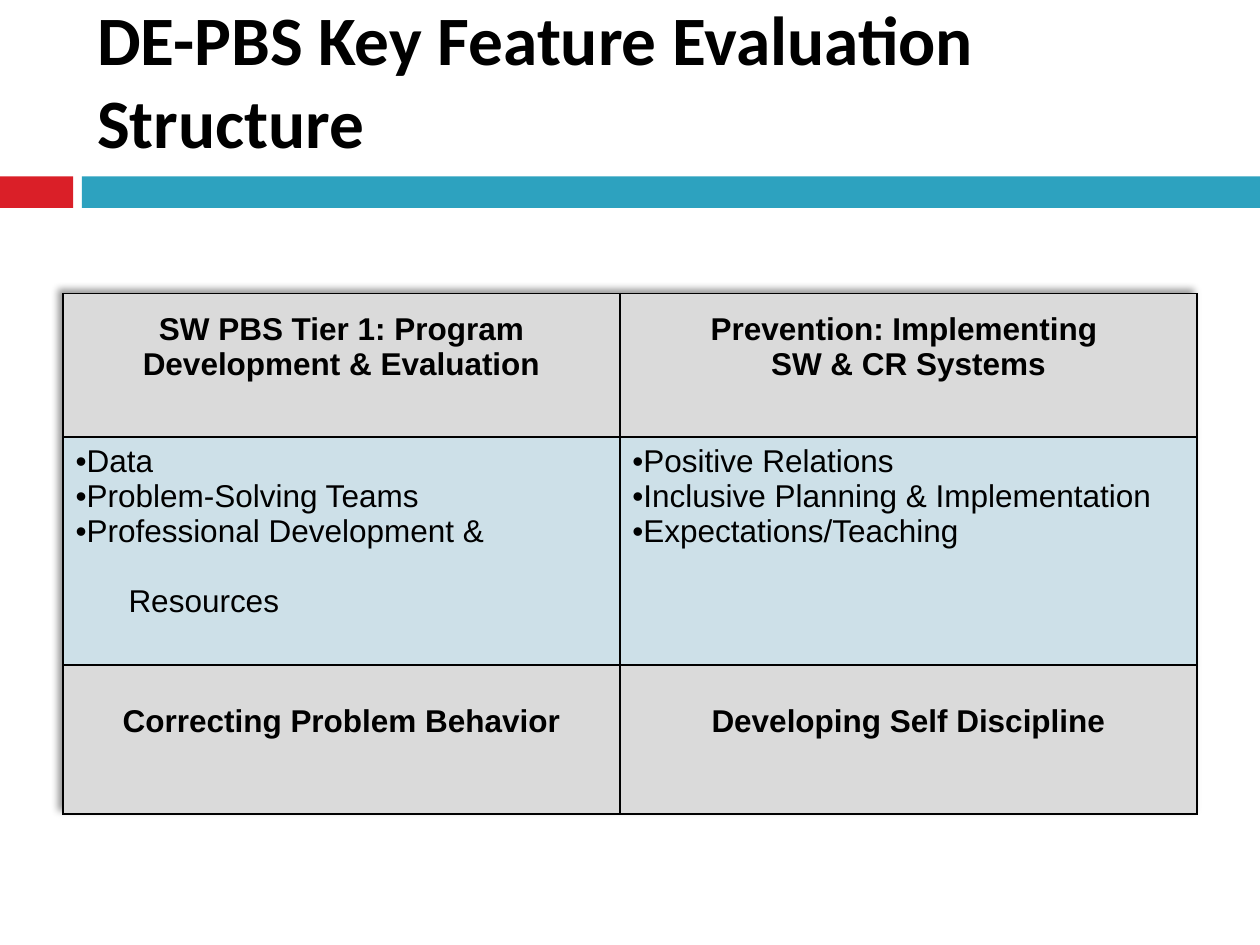
import pptx
import pptx.util
import pptx.dml.color
import pptx.enum.shapes
import pptx.enum.text
import pptx.oxml
from dataclasses import dataclass
from pptx.oxml.ns import qn

Inch, Pt = pptx.util.Inches, pptx.util.Pt
Align, Anchor = pptx.enum.text.PP_ALIGN, pptx.enum.text.MSO_ANCHOR
WIDE, HIGH = 10, 7.5
BLACK, GREY, PALE = "000000", "DADADA", "CDE0E8"
NS = 'xmlns:a="http://schemas.openxmlformats.org/drawingml/2006/main"'


@dataclass
class Band:
    left: float
    width: float
    fill: str


@dataclass
class Row:
    height: float
    cells: list[list[str]]
    head: bool = True


BANDS = [Band(0, 0.58, "DA1F28"), Band(0.65, WIDE - 0.65, "2DA2BF")]
COLS = [4.42, 4.58]
TAIL = "Resources"  # continues the bullet above it
ROWS = [
    Row(1.14, [["SW PBS Tier 1: Program Development & Evaluation"],
               ["Prevention: Implementing ", "SW & CR Systems"]]),
    Row(1.81, [["Data", "Problem-Solving Teams", "Professional Development &", TAIL],
               ["Positive Relations", "Inclusive Planning & Implementation",
                "Expectations/Teaching"]], head=False),
    Row(1.18, [["Correcting Problem Behavior"], ["Developing Self Discipline"]]),
]


def paint(fill, tint: str) -> None:
    fill.solid()
    fill.fore_color.rgb = pptx.dml.color.RGBColor.from_string(tint)


def style(font, face: str, size: float, bold: bool) -> None:
    font.name, font.size, font.bold = face, Pt(size), bold
    paint(font.fill, BLACK)


def draw_band(slide, band: Band) -> None:
    shape = slide.shapes.add_shape(pptx.enum.shapes.MSO_SHAPE.RECTANGLE, Inch(band.left),
                                   Inch(1.4), Inch(band.width), Inch(0.25))
    shape.shadow.inherit = False
    shape.line.fill.background()
    paint(shape.fill, band.fill)


def draw_title(slide, text: str) -> None:
    title = slide.shapes.title
    title.left, title.top, title.width, title.height = map(Inch, (0.67, 0.42, 8.92, 1.08))
    frame = title.text_frame
    frame.text = text
    frame.word_wrap = True
    frame.auto_size = pptx.enum.text.MSO_AUTO_SIZE.NONE
    frame.vertical_anchor = Anchor.MIDDLE
    frame.margin_bottom = Inch(0.71)  # lifts the two lines above the bands
    para = frame.paragraphs[0]
    para.alignment = Align.LEFT
    style(para.font, "Calibri", 39.6, True)


def add_edges(cell) -> None:
    props = cell._tc.get_or_add_tcPr()
    for spot, side in enumerate(("lnL", "lnR", "lnT", "lnB")):
        props.insert(spot, pptx.oxml.parse_xml(
            f'<a:{side} {NS} w="12700"><a:solidFill><a:srgbClr val="{BLACK}"/>'
            f'</a:solidFill></a:{side}>'))


def add_bullet(para) -> None:
    props = para._p.get_or_add_pPr()
    props.set("marL", "0")
    props.set("indent", "0")
    # The bullet font and sign come before the default run format
    mark = props.find(qn("a:defRPr"))
    for part in ('buFont {} typeface="Arial"', 'buChar {} char="•"'):
        node = pptx.oxml.parse_xml(f"<a:{part.format(NS)}/>")
        if mark is None:
            props.append(node)
        else:
            mark.addprevious(node)


def fill_cell(cell, lines: list[str], head: bool) -> None:
    frame = cell.text_frame
    frame.text = "\n".join(lines)
    for para in frame.paragraphs:
        style(para.font, "Arial", 18, head)
        if head:
            para.alignment = Align.CENTER
        elif para.text == TAIL:
            para.space_before = Pt(20)
            para._p.get_or_add_pPr().set("marL", str(Inch(0.42)))
        else:
            add_bullet(para)
    cell.vertical_anchor = Anchor.MIDDLE if head else Anchor.TOP
    if head:
        cell.margin_bottom = Inch(0.34)
    paint(cell.fill, GREY if head else PALE)
    add_edges(cell)


def draw_table(slide, rows: list[Row]) -> None:
    high = sum(row.height for row in rows)
    table = slide.shapes.add_table(len(rows), len(COLS), Inch(0.5), Inch(2.33),
                                   Inch(sum(COLS)), Inch(high)).table
    table.first_row = table.horz_banding = False
    for col, width in zip(table.columns, COLS):
        col.width = Inch(width)
    for spot, row in enumerate(rows):
        table.rows[spot].height = Inch(row.height)
        for cell, lines in zip(table.rows[spot].cells, row.cells):
            fill_cell(cell, lines, row.head)
    # Soft shadow towards the top left
    table._tbl.find(qn("a:tblPr")).insert(0, pptx.oxml.parse_xml(
        f'<a:effectLst {NS}><a:outerShdw blurRad="50800" dist="38100" dir="13500000">'
        f'<a:srgbClr val="{BLACK}"><a:alpha val="40000"/></a:srgbClr>'
        f'</a:outerShdw></a:effectLst>'))


def main() -> None:
    deck = pptx.Presentation()
    deck.slide_width, deck.slide_height = Inch(WIDE), Inch(HIGH)
    slide = deck.slides.add_slide(deck.slide_layouts[5])
    for band in BANDS:
        draw_band(slide, band)
    draw_title(slide, "DE-PBS Key Feature Evaluation Structure")
    draw_table(slide, ROWS)
    deck.save("out.pptx")


if __name__ == "__main__":
    main()
